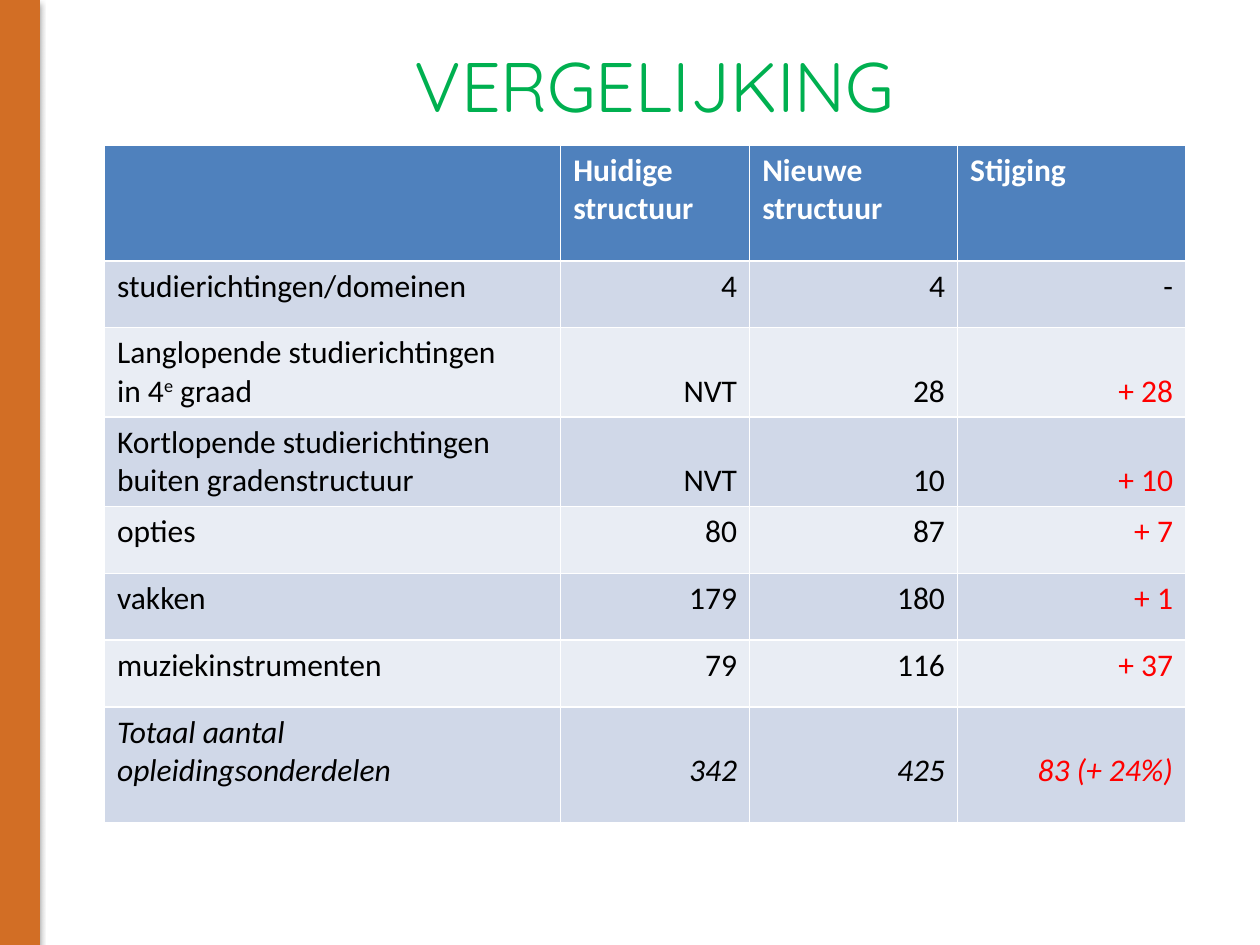
from lxml import etree
from pptx import Presentation, util as u
from pptx.dml.color import RGBColor
from pptx.enum import shapes, text
from pptx.oxml import ns

WHITE = RGBColor(0xFF, 0xFF, 0xFF)
BLACK = RGBColor(0, 0, 0)
RED = RGBColor(0xFF, 0, 0)
GREEN = RGBColor(0, 0xB0, 0x50)
ORANGE = RGBColor(0xD2, 0x6E, 0x25)
BLUE = RGBColor(0x4F, 0x81, 0xBD)
BANDS = [RGBColor(0xE9, 0xED, 0xF4), RGBColor(0xD0, 0xD8, 0xE8)]

COLS = [3.62, 1.5, 1.65, 1.81]
ROWS = [0.92, 0.53, 0.67, 0.67, 0.53, 0.53, 0.53, 0.92]
DATA = [
    ["", "Huidige structuur", "Nieuwe structuur", "Stijging"],
    ["studierichtingen/domeinen", "4", "4", "-"],
    ["Langlopende studierichtingen\nin 4^e^ graad", "NVT", "28", "+ 28"],
    ["Kortlopende studierichtingen buiten gradenstructuur", "NVT", "10", "+ 10"],
    ["opties", "80", "87", "+ 7"],
    ["vakken", "179", "180", "+ 1"],
    ["muziekinstrumenten", "79", "116", "+ 37"],
    ["Totaal aantal opleidingsonderdelen", "342", "425", "83 (+ 24%)"],
]
LAST = len(DATA) - 1
LOW = {2: 0.05, 3: 0.05, LAST: 0.26}  # bottom margin where values sit on line two


def style(font, **form):
    color = form.pop("color")
    for key, val in form.items():
        setattr(font, key, val)
    font.color.rgb = color


deck = Presentation()
deck.slide_width, deck.slide_height = u.Inches(10), u.Inches(7.5)
slide = deck.slides.add_slide(deck.slide_layouts[5])

# Side bar, behind everything else
bar = slide.shapes.add_shape(
    shapes.MSO_SHAPE.RECTANGLE, 0, 0, u.Inches(0.31), deck.slide_height)
bar.fill.solid()
bar.fill.fore_color.rgb = ORANGE
bar.line.color.rgb = ORANGE
bar.line.width = u.Pt(0.75)
bar.shadow.inherit = False
glow = etree.SubElement(
    bar._element.spPr.find(ns.qn("a:effectLst")), ns.qn("a:outerShdw"),
    blurRad=str(u.Pt(3.1)), dist=str(u.Pt(1.8)), dir="5400000", rotWithShape="0")
tint = etree.SubElement(glow, ns.qn("a:srgbClr"), val="000000")
etree.SubElement(tint, ns.qn("a:alpha"), val="35000")
slide.shapes._spTree.insert(2, bar._element)

# Title
title = slide.shapes.title
place = {"left": 1.14, "top": 0.29, "width": 8.11, "height": 1.22}
for key, val in place.items():
    setattr(title, key, u.Inches(val))
frame = title.text_frame
frame.text = "VERGELIJKING"
frame.vertical_anchor = text.MSO_ANCHOR.TOP
head = frame.paragraphs[0]
head.alignment = text.PP_ALIGN.CENTER
style(head.runs[0].font, size=u.Pt(40), name="Quicksand", color=GREEN)

# Comparison table
grid = slide.shapes.add_table(
    len(ROWS), len(COLS), u.Inches(0.83), u.Inches(1.15),
    u.Inches(sum(COLS)), u.Inches(sum(ROWS))).table
for col, wide in zip(grid.columns, COLS):
    col.width = u.Inches(wide)
for row, high in zip(grid.rows, ROWS):
    row.height = u.Inches(high)

for r, row in enumerate(DATA):
    for c, words in enumerate(row):
        cell = grid.cell(r, c)
        cell.fill.solid()
        cell.fill.fore_color.rgb = BANDS[r % 2] if r else BLUE
        value = r > 0 and c > 0
        if value and r in LOW:
            cell.vertical_anchor = text.MSO_ANCHOR.BOTTOM
            cell.margin_bottom = u.Inches(LOW[r])
        rise = c == 3 and words.startswith(("+", "83"))
        color = WHITE if r == 0 else RED if rise else BLACK
        for n, line in enumerate(words.split("\n")):
            body = cell.text_frame
            para = body.add_paragraph() if n else body.paragraphs[0]
            para.alignment = text.PP_ALIGN.RIGHT if value else text.PP_ALIGN.LEFT
            para.font.size = u.Pt(18)
            for k, part in enumerate(line.split("^")):
                if not part:
                    continue
                run = para.add_run()
                run.text = part
                style(run.font, size=u.Pt(18), name="Calibri", bold=r == 0,
                      italic=r == LAST, color=color)
                if k % 2:  # text between carets is superscript
                    run._r.get_or_add_rPr().set("baseline", "30000")

deck.save("out.pptx")
